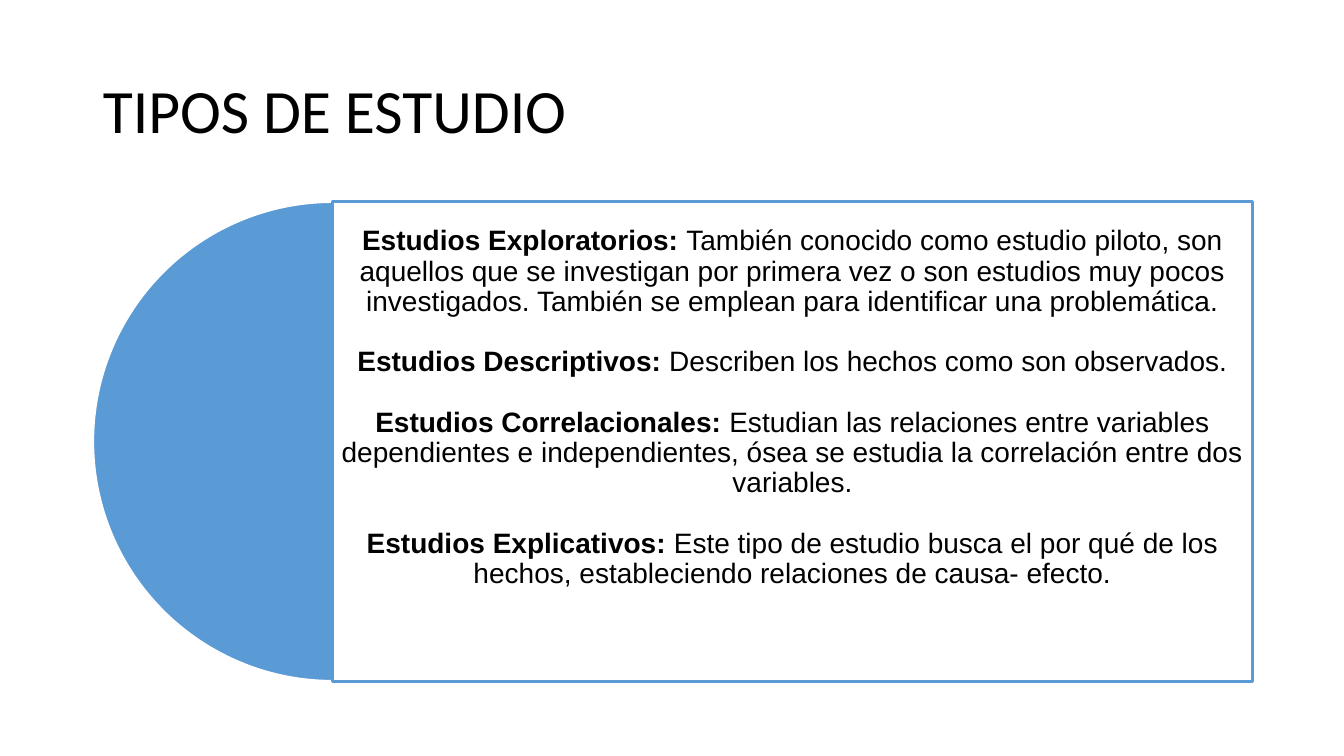
from pptx import Presentation
from pptx.dml.color import RGBColor
from pptx.enum.shapes import MSO_SHAPE
from pptx.enum.text import MSO_ANCHOR, PP_ALIGN
from pptx.oxml.ns import qn
from pptx.util import Inches, Pt
from lxml import etree

PIE, RECTANGLE = MSO_SHAPE.PIE, MSO_SHAPE.RECTANGLE
MIDDLE = MSO_ANCHOR.MIDDLE
LEFT, CENTER = PP_ALIGN.LEFT, PP_ALIGN.CENTER

BLUE = RGBColor(0x5B, 0x9B, 0xD5)
WHITE = RGBColor(0xFF, 0xFF, 0xFF)
BLACK = RGBColor(0, 0, 0)

STUDIES = [
    ("Estudios Exploratorios:",
     "También conocido como estudio piloto, son aquellos que se investigan por "
     "primera vez o son estudios muy pocos investigados. También se emplean "
     "para identificar una problemática."),
    ("Estudios Descriptivos:", "Describen los hechos como son observados."),
    ("Estudios Correlacionales:",
     "Estudian las relaciones entre variables dependientes e independientes, "
     "ósea se estudia la correlación entre dos variables."),
    ("Estudios Explicativos:",
     "Este tipo de estudio busca el por qué de los hechos, estableciendo "
     "relaciones de causa- efecto."),
]


def add_text(paragraph, text, font="Arial", size=20, bold=False, color=BLACK):
    run = paragraph.add_run()
    run.text = text
    run.font.name = font
    run.font.size = Pt(size)
    run.font.bold = bold
    run.font.color.rgb = color


class StudySlide:
    """Holds the slide and its shared style."""
    line_width = Pt(2)
    line_spacing = 0.9

    def __init__(self, deck):
        self.slide = deck.slides.add_slide(deck.slide_layouts[5])

    def frame(self, shape, insets):
        frame = shape.text_frame
        frame.word_wrap = True
        frame.vertical_anchor = MIDDLE
        (frame.margin_left, frame.margin_top,
         frame.margin_right, frame.margin_bottom) = map(Inches, insets)
        return frame

    def title(self, text, box):
        title = self.slide.shapes.title
        title.left, title.top, title.width, title.height = map(Inches, box)
        heading = self.frame(title, (0.1, 0.05, 0.1, 0.05)).paragraphs[0]
        heading.alignment = LEFT
        heading.line_spacing = self.line_spacing
        add_text(heading, text, font="Calibri", size=44)

    def shape(self, kind, box, fill, line, opacity=100):
        shape = self.slide.shapes.add_shape(kind, *map(Inches, box))
        shape.shadow.inherit = False
        shape.fill.solid()
        shape.fill.fore_color.rgb = fill
        shape.line.color.rgb = line
        shape.line.width = self.line_width
        if opacity < 100:
            color = shape.fill._xPr.find(qn("a:solidFill"))[0]
            etree.SubElement(color, qn("a:alpha"), val=str(opacity * 1000))
        return shape

    def definitions(self, panel, entries, insets, gap):
        frame = self.frame(panel, insets)
        for index, (term, meaning) in enumerate(entries):
            entry = frame.add_paragraph() if index else frame.paragraphs[0]
            entry.alignment = CENTER
            entry.line_spacing = self.line_spacing
            if index:
                entry.space_before = Pt(gap)
            add_text(entry, term + " ", bold=True)
            add_text(entry, meaning)


def main():
    deck = Presentation()
    deck.slide_width, deck.slide_height = Inches(13.33), Inches(7.5)
    page = StudySlide(deck)

    # Title
    page.title("TIPOS DE ESTUDIO", (0.92, 0.4, 11.5, 1.45))

    # Half disc, from 90 to 270 degrees
    half_disc = page.shape(PIE, (0.92, 2, 4.76, 4.76), BLUE, WHITE)
    half_disc.adjustments[0] = 54
    half_disc.adjustments[1] = 162

    # Panel with the definitions, set above the middle
    panel = page.shape(RECTANGLE, (3.3, 2, 9.12, 4.76), WHITE, BLUE, opacity=90)
    page.definitions(panel, STUDIES, (0.08, 0.08, 0.08, 0.74), gap=21.6)

    deck.save("out.pptx")


if __name__ == "__main__":
    main()
